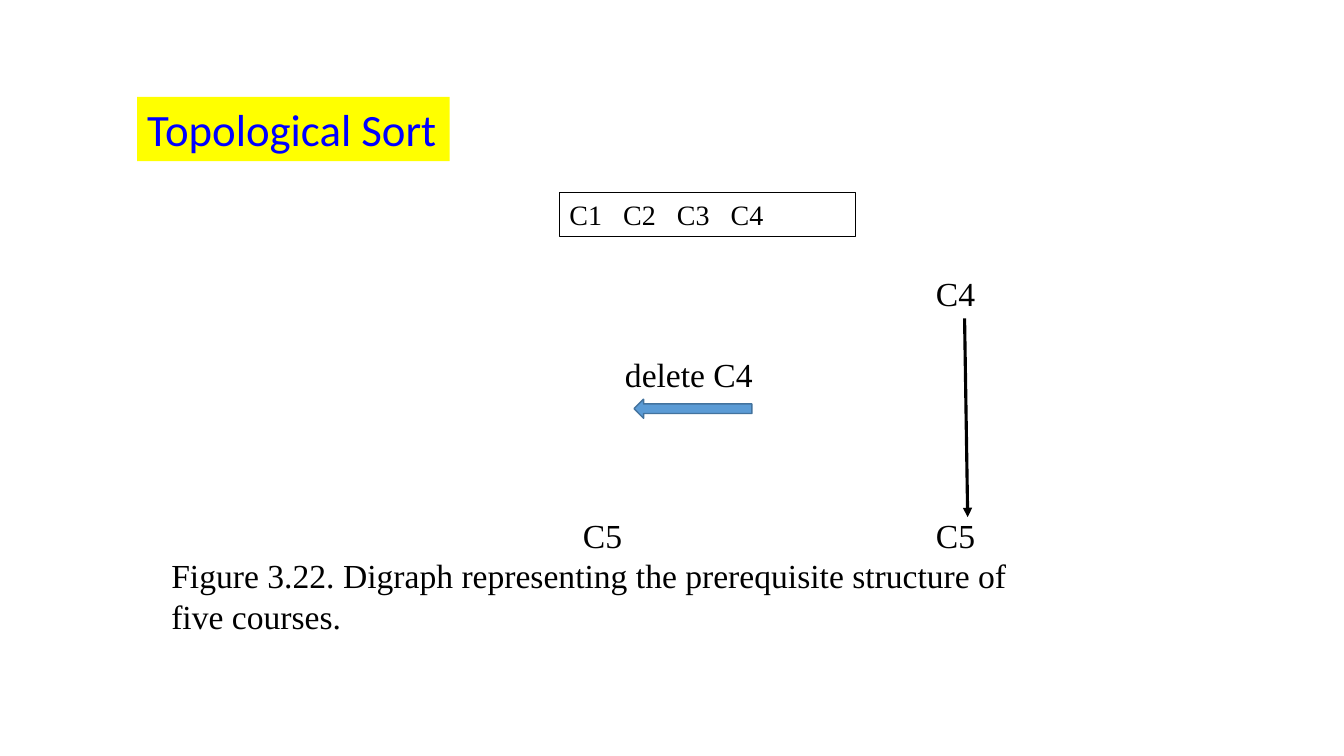
from pptx import Presentation, util as u
from pptx.dml.color import RGBColor
from pptx.enum import shapes, text
from pptx.oxml.ns import qn
from lxml import etree

BLACK = RGBColor(0x00, 0x00, 0x00)
WHITE = RGBColor(0xFF, 0xFF, 0xFF)
YELLOW = RGBColor(0xFF, 0xFF, 0x00)
BLUE = RGBColor(0x00, 0x00, 0xFF)
ARROW_FILL = RGBColor(0x5B, 0x9B, 0xD5)
ARROW_LINE = RGBColor(0x43, 0x73, 0x9E)
SERIF = "Times New Roman"
SANS = "Calibri"
TOP = 195.1
LEADING = 28.8


def row(n):
    return TOP + n * LEADING


class Deck:
    def __init__(self, prs):
        self.s = prs.slides.add_slide(prs.slide_layouts[5])
        self.font, self.size = SERIF, 24

    def put_text(self, sp, words, size, color, font, inset=(7.2, 3.6), wrap=True):
        tf = sp.text_frame
        tf.text = words
        tf.word_wrap = wrap
        tf.auto_size = text.MSO_AUTO_SIZE.NONE
        tf.vertical_anchor = text.MSO_ANCHOR.TOP
        tf.margin_left = tf.margin_right = u.Pt(inset[0])
        tf.margin_top = tf.margin_bottom = u.Pt(inset[1])
        p = tf.paragraphs[0]
        p.alignment = text.PP_ALIGN.LEFT
        for r in p.runs:
            r.font.name, r.font.size = font, u.Pt(size)
            r.font.color.rgb = color
        return p

    def title(self, words, x, y, w, h):
        sp = self.s.shapes.title
        sp.left, sp.top, sp.width, sp.height = map(u.Pt, (x, y, w, h))
        sp.fill.solid()
        sp.fill.fore_color.rgb = YELLOW
        p = self.put_text(sp, words, 32, BLUE, SANS, wrap=False)
        p.line_spacing = 1.0

    def label(self, words, x, n, w, lines=1):
        sp = self.s.shapes.add_textbox(*map(u.Pt, (x, row(n), w, lines * LEADING)))
        p = self.put_text(sp, words, self.size, BLACK, self.font, (0, 0))
        p.line_spacing = u.Pt(LEADING)

    def shape(self, kind, x, y, w, h, fill, line):
        sp = self.s.shapes.add_shape(kind, *map(u.Pt, (x, y, w, h)))
        sp.shadow.inherit = False
        sp.fill.solid()
        sp.fill.fore_color.rgb = fill
        sp.line.color.rgb = line
        sp.line.width = u.Pt(1)
        return sp

    def queue(self, courses, x, y, w, h, pitch):
        sp = self.shape(shapes.MSO_SHAPE.RECTANGLE, x, y, w, h, WHITE, BLACK)
        p = self.put_text(sp, "\t".join(courses), 20, BLACK, self.font)
        tabs = etree.SubElement(p._p.get_or_add_pPr(), qn("a:tabLst"))
        for i in range(1, len(courses)):
            etree.SubElement(tabs, qn("a:tab"), pos=str(u.Pt(i * pitch)), algn="l")

    def edge(self, x1, y1, x2, y2):
        sp = self.s.shapes.add_connector(
            shapes.MSO_CONNECTOR.STRAIGHT, *map(u.Pt, (x1, y1, x2, y2)))
        sp.line.color.rgb = BLACK
        sp.line.width = u.Pt(2.25)
        props = sp._element.spPr
        etree.SubElement(props.find(qn("a:ln")), qn("a:tailEnd"), type="triangle")
        etree.SubElement(props, qn("a:effectLst"))


def main():
    prs = Presentation()
    prs.slide_width, prs.slide_height = u.Pt(960), u.Pt(540)
    deck = Deck(prs)
    deck.title("Topological Sort", 97.9, 69.1, 223.2, 46.1)
    deck.label("C4", 668.5, 0, 40)
    deck.label("delete C4", 446.4, 2, 110)
    deck.label("C5", 416.4, 6, 40)
    deck.label("C5", 668.5, 6, 40)
    deck.label("Figure 3.22. Digraph representing the prerequisite structure of five courses.",
               122.4, 7, 636.5, 2)
    deck.edge(689, 227.5, 691.2, 369.4)
    deck.shape(shapes.MSO_SHAPE.LEFT_ARROW, 452.9, 285.1, 84.2, 13.7, ARROW_FILL, ARROW_LINE)
    deck.queue(["C1", "C2", "C3", "C4"], 399.6, 137.5, 211.7, 31.7, 38.4)
    prs.save("out.pptx")


if __name__ == "__main__":
    main()
